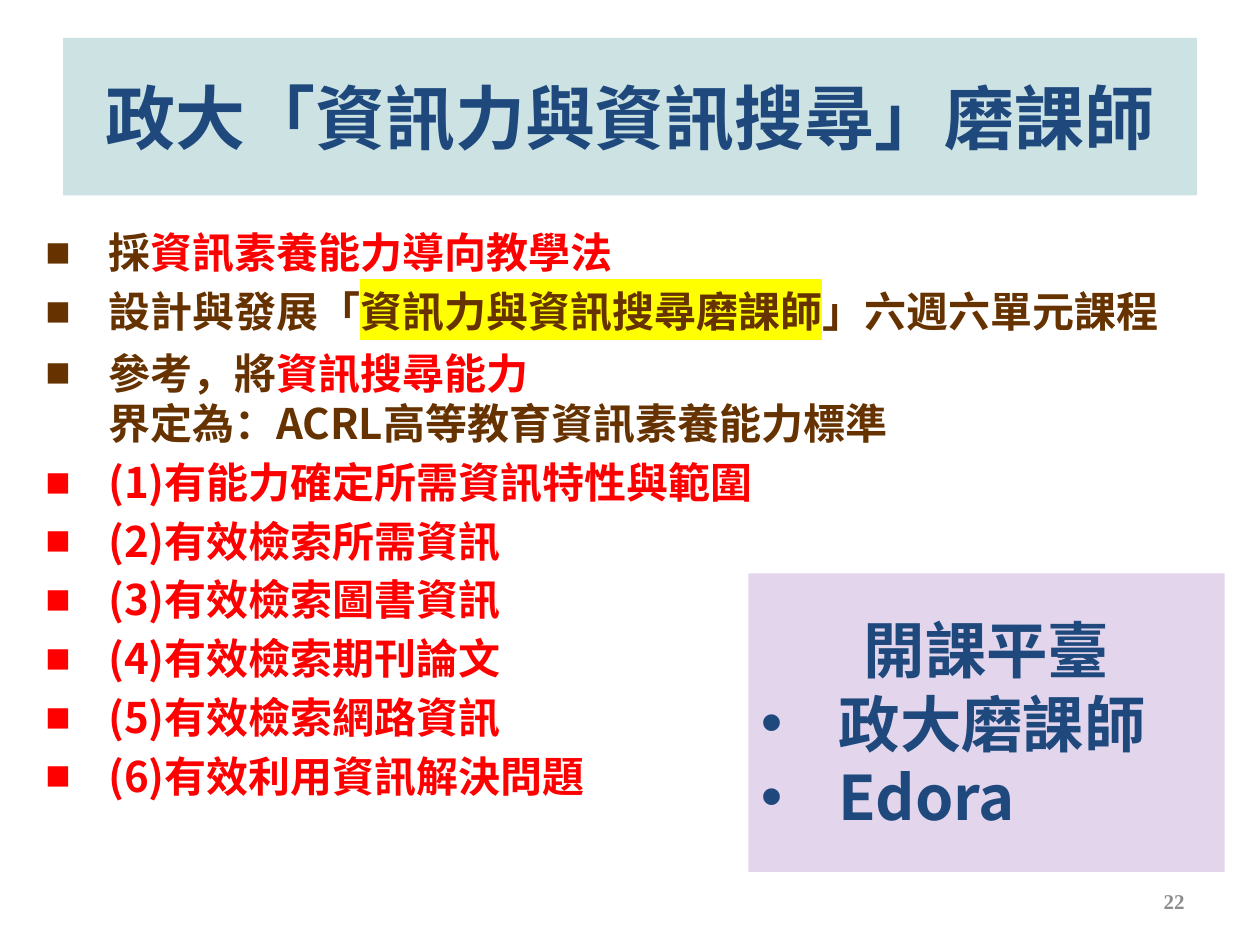
from dataclasses import dataclass
from typing import Optional

from lxml.etree import SubElement
from pptx import Presentation
from pptx.dml.color import RGBColor
from pptx.enum.shapes import MSO_SHAPE
from pptx.enum.text import MSO_ANCHOR, MSO_AUTO_SIZE, PP_ALIGN
from pptx.oxml.ns import qn
from pptx.util import Inches, Pt


@dataclass(frozen=True)
class Theme:
    navy: str = "1F497D"
    brown: str = "663300"
    red: str = "FF0000"
    yellow: str = "FFFF00"
    gray: str = "8C8C8C"
    teal: str = "007076"
    purple: str = "7030A0"
    tint: int = 20
    cjk_font: str = "Noto Sans CJK SC"
    number_font: str = "Times New Roman"
    title_size: float = 40
    body_size: float = 24
    platform_size: float = 35.1
    number_size: float = 12


@dataclass(frozen=True)
class Piece:
    text: str
    color: str
    highlight: Optional[str] = None
    break_after: bool = False


THEME = Theme()


def place(shape, left: float, top: float, width: float, height: float) -> None:
    shape.left, shape.top = Inches(left), Inches(top)
    shape.width, shape.height = Inches(width), Inches(height)


def tint_fill(shape, color: str) -> None:
    shape.fill.solid()
    shape.fill.fore_color.rgb = RGBColor.from_string(color)
    color_node = shape.fill._xPr.find(qn("a:solidFill"))[0]
    SubElement(color_node, qn("a:alpha"), val=str(THEME.tint * 1000))


def add_piece(paragraph, piece: Piece, size: float, font: str = THEME.cjk_font) -> None:
    run = paragraph.add_run()
    run.text = piece.text
    run.font.size = Pt(size)
    run.font.bold = True
    run.font.color.rgb = RGBColor.from_string(piece.color)
    properties = run._r.get_or_add_rPr()
    if piece.highlight:
        marker = SubElement(properties, qn("a:highlight"))
        SubElement(marker, qn("a:srgbClr"), val=piece.highlight)
    run.font.name = font
    SubElement(properties, qn("a:ea"), typeface=font)
    if piece.break_after:
        paragraph.add_line_break()


def set_bullet(paragraph, symbol: str, indent: float) -> None:
    properties = paragraph._p.get_or_add_pPr()
    properties.set("marL", str(Inches(indent)))
    properties.set("indent", str(-Inches(indent)))
    SubElement(properties, qn("a:buFont"), typeface="Arial")
    SubElement(properties, qn("a:buChar"), char=symbol)


def prepare_frame(shape, anchor: MSO_ANCHOR):
    frame = shape.text_frame
    frame.word_wrap = True
    frame.auto_size = MSO_AUTO_SIZE.NONE
    frame.vertical_anchor = anchor
    return frame


def next_paragraph(frame, index: int):
    return frame.paragraphs[0] if index == 0 else frame.add_paragraph()


ABILITIES = [
    "有能力確定所需資訊特性與範圍",
    "有效檢索所需資訊",
    "有效檢索圖書資訊",
    "有效檢索期刊論文",
    "有效檢索網路資訊",
    "有效利用資訊解決問題",
]
COURSE_POINTS = [
    [Piece("採", THEME.brown), Piece("資訊素養能力導向教學法", THEME.red)],
    [
        Piece("設計與發展「", THEME.brown),
        Piece("資訊力與資訊搜尋磨課師", THEME.brown, THEME.yellow),
        Piece("」六週六單元課程", THEME.brown),
    ],
    [
        Piece("參考，將", THEME.brown),
        Piece("資訊搜尋能力", THEME.red, break_after=True),
        Piece("界定為：ACRL高等教育資訊素養能力標準", THEME.brown),
    ],
] + [[Piece(f"({n}){ability}", THEME.red)] for n, ability in enumerate(ABILITIES, 1)]
PLATFORMS = ["政大磨課師", "Edora"]


def main() -> None:
    deck = Presentation()
    deck.slide_width, deck.slide_height = Inches(10), Inches(7.5)
    slide = deck.slides.add_slide(deck.slide_layouts[1])

    # Title band
    title = slide.shapes.title
    place(title, 0.5, 0.3, 9, 1.25)
    tint_fill(title, THEME.teal)
    heading = prepare_frame(title, MSO_ANCHOR.MIDDLE).paragraphs[0]
    heading.alignment = PP_ALIGN.CENTER
    add_piece(heading, Piece("政大「資訊力與資訊搜尋」磨課師", THEME.navy), THEME.title_size)

    # Course points
    course = slide.placeholders[1]
    place(course, 0.26, 1.75, 9.47, 5.2)
    course_frame = prepare_frame(course, MSO_ANCHOR.TOP)
    for index, pieces in enumerate(COURSE_POINTS):
        point = next_paragraph(course_frame, index)
        set_bullet(point, "■", 0.5)
        for piece in pieces:
            add_piece(point, piece, THEME.body_size)

    # Page number
    page_number = slide.shapes.add_textbox(
        Inches(7.17), Inches(6.95), Inches(2.33), Inches(0.4))
    number_line = prepare_frame(page_number, MSO_ANCHOR.MIDDLE).paragraphs[0]
    number_line.alignment = PP_ALIGN.RIGHT
    add_piece(number_line, Piece("22", THEME.gray), THEME.number_size, THEME.number_font)

    # Course platforms
    platform_box = slide.shapes.add_shape(
        MSO_SHAPE.RECTANGLE, Inches(5.94), Inches(4.55), Inches(3.78), Inches(2.37))
    platform_box.shadow.inherit = False
    platform_box.line.fill.background()
    tint_fill(platform_box, THEME.purple)
    platform_frame = prepare_frame(platform_box, MSO_ANCHOR.MIDDLE)
    for index, name in enumerate(["開課平臺", *PLATFORMS]):
        line = next_paragraph(platform_frame, index)
        line.alignment = PP_ALIGN.LEFT if index else PP_ALIGN.CENTER
        if index:
            set_bullet(line, "•", 0.62)
        add_piece(line, Piece(name, THEME.navy), THEME.platform_size)

    deck.save("out.pptx")


if __name__ == "__main__":
    main()
